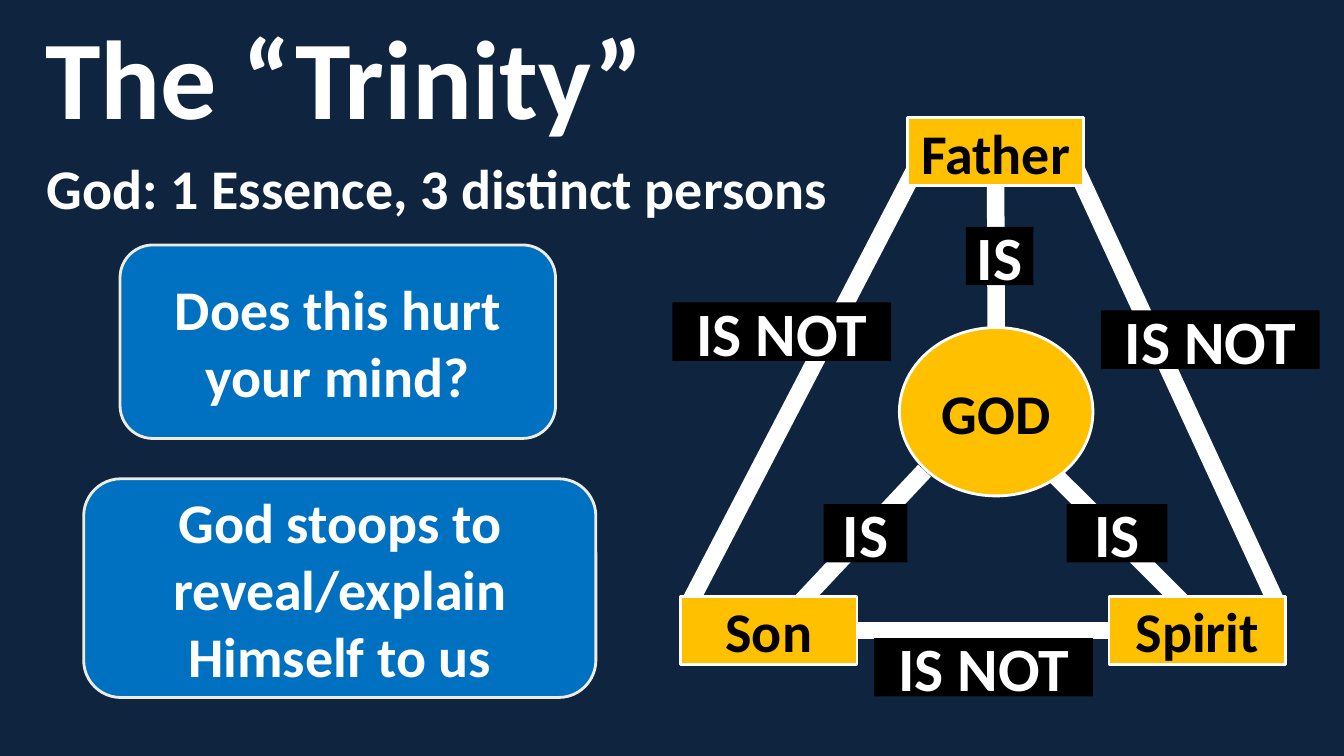
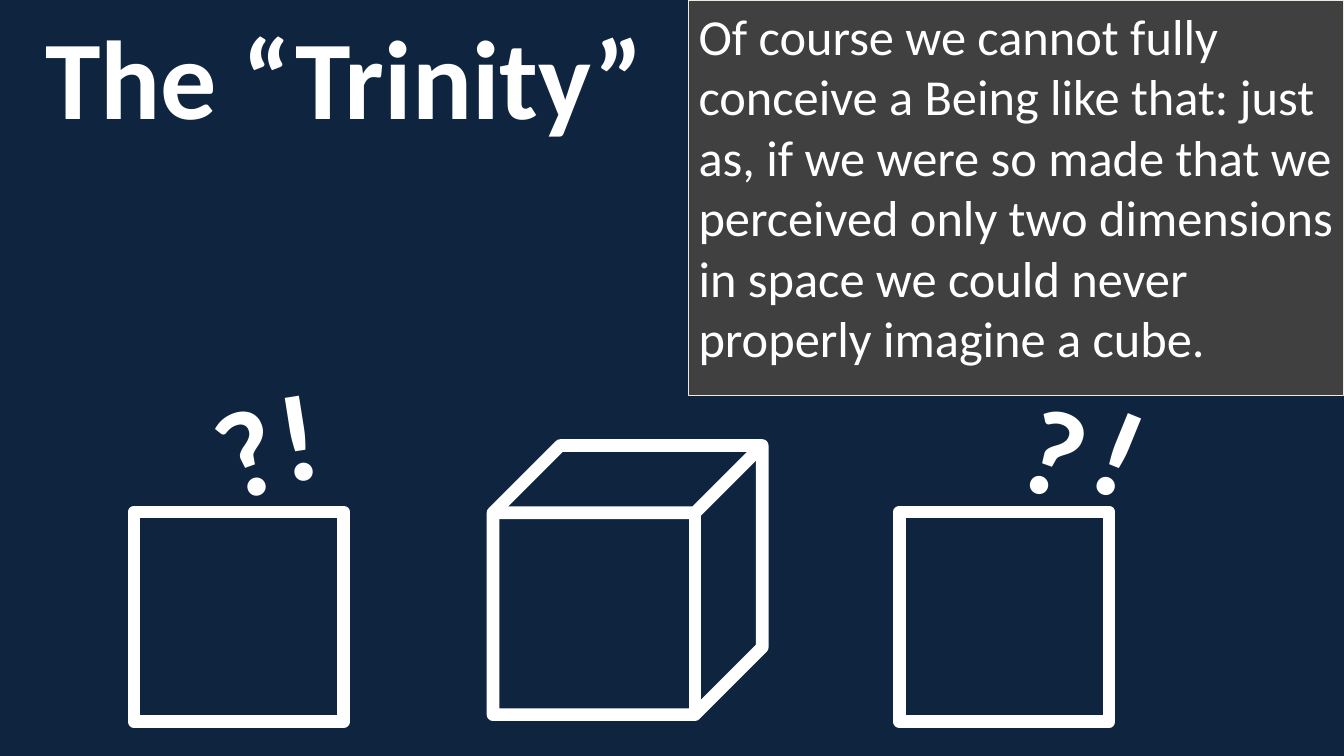
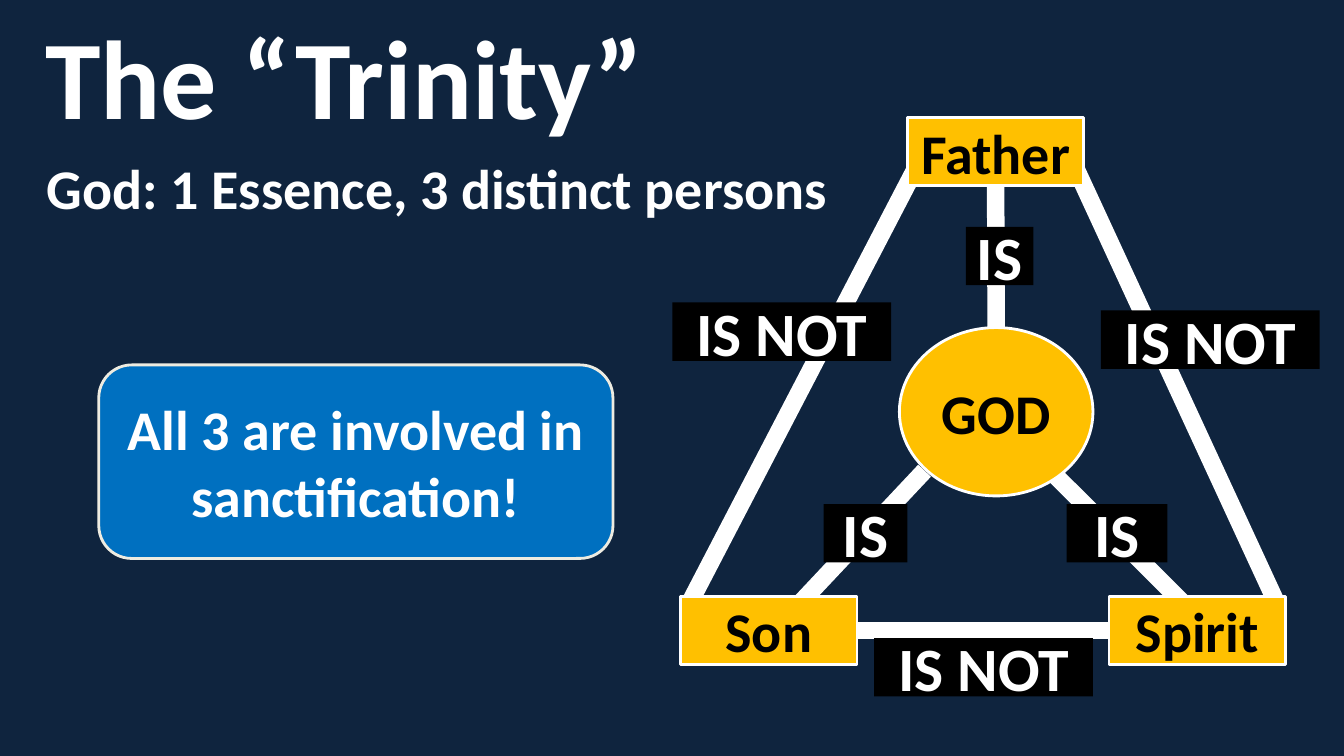
from pptx import Presentation
from pptx.dml.color import RGBColor
from pptx.enum import shapes, text
from pptx.oxml import ns
from pptx import util as u
from lxml import etree

NAVY = RGBColor(0x0F, 0x24, 0x3E)
WHITE = RGBColor(0xFF, 0xFF, 0xFF)
BLACK = RGBColor(0x00, 0x00, 0x00)
GOLD = RGBColor(0xFF, 0xC0, 0x00)
BLUE = RGBColor(0x00, 0x70, 0xC0)
GREY = RGBColor(0x40, 0x40, 0x40)
CREAM = RGBColor(0xEE, 0xEC, 0xE1)

SHAPE = shapes.MSO_SHAPE
CENTER = text.PP_ALIGN.CENTER
MIDDLE = text.MSO_ANCHOR.MIDDLE
TOP, LEFT, BOTTOM, RIGHT = range(4)
TITLE = "The “Trinity”"


class Deck:
    font = "Calibri"
    beam_width = 12.5
    outline_width = 9

    def __init__(self):
        self.presentation = Presentation()
        self.presentation.slide_width = u.Inches(13.33)
        self.presentation.slide_height = u.Inches(7.5)
        background = self.presentation.slide_master.background.fill
        background.solid()
        background.fore_color.rgb = NAVY
        self.slide = None

    def set_text(self, shape, words, size, color=WHITE, bold=True, align=CENTER, anchor=MIDDLE):
        frame = shape.text_frame
        frame.text = words
        frame.word_wrap = True
        frame.auto_size = text.MSO_AUTO_SIZE.NONE
        frame.vertical_anchor = anchor
        paragraph = frame.paragraphs[0]
        paragraph.alignment = align
        font = paragraph.runs[0].font
        font.name = self.font
        font.size = u.Pt(size)
        font.bold = bold
        font.color.rgb = color

    def start_slide(self, title):
        layout = self.presentation.slide_layouts.get_by_name("Title Only")
        self.slide = self.presentation.slides.add_slide(layout)
        shape = self.slide.shapes.title
        shape.left, shape.top = u.Inches(0), u.Inches(0.08)
        shape.width, shape.height = u.Inches(6.84), u.Inches(1.32)
        self.set_text(shape, title, 80)

    def text_box(self, words, left, top, width, height, size, rotation=0):
        box = self.slide.shapes.add_textbox(*map(u.Inches, (left, top, width, height)))
        box.rotation = rotation
        self.set_text(box, words, size)

    def shape(self, kind, left, top, width, height, fill=None, line=None, line_width=2):
        shape = self.slide.shapes.add_shape(kind, *map(u.Inches, (left, top, width, height)))
        shape.shadow.inherit = False
        if fill is None:
            shape.fill.background()
        else:
            shape.fill.solid()
            shape.fill.fore_color.rgb = fill
        if line is None:
            shape.line.fill.background()
        else:
            shape.line.color.rgb = line
            shape.line.width = u.Pt(line_width)
        return shape

    def beam(self, *ends):
        connector = self.slide.shapes.add_connector(
            shapes.MSO_CONNECTOR.STRAIGHT, *map(u.Inches, ends))
        connector.line.color.rgb = WHITE
        connector.line.width = u.Pt(self.beam_width)
        etree.SubElement(connector._element.spPr, ns.qn("a:effectLst"))
        return connector

    def join(self, start, start_side, end, end_side):
        connector = self.beam(0, 0, 1, 1)
        connector.begin_connect(start, start_side)
        connector.end_connect(end, end_side)

    def node(self, kind, words, left, top, width, height):
        shape = self.shape(kind, left, top, width, height, GOLD, WHITE)
        self.set_text(shape, words, 40, BLACK)
        return shape

    def person(self, name, left, top):
        return self.node(SHAPE.RECTANGLE, name, left, top, 1.75, 0.67)

    def label(self, words, left, top, width):
        self.set_text(self.shape(SHAPE.RECTANGLE, left, top, width, 0.58, BLACK), words, 44)

    def callout(self, words, left, top, width, height):
        shape = self.shape(SHAPE.ROUNDED_RECTANGULAR_CALLOUT, left, top, width, height, BLUE, CREAM)
        for index, value in enumerate((-0.22, 0.5, 0.17)):
            shape.adjustments[index] = value
        self.set_text(shape, words, 40)

    def quote(self, words, left, top, width, height):
        shape = self.shape(SHAPE.RECTANGLE, left, top, width, height, GREY, CREAM, 0.75)
        self.set_text(shape, words, 36, bold=False, align=text.PP_ALIGN.LEFT,
                      anchor=text.MSO_ANCHOR.TOP)

    def outline(self, kind, left, top, side):
        self.shape(kind, left, top, side, side, line=WHITE, line_width=self.outline_width)

    def trinity_diagram(self):
        for ends in ((10.42, 4.67, 11.75, 6), (9.17, 4.67, 7.92, 6),
                     (9.17, 1.5, 6.83, 6), (10.67, 1.67, 12.67, 6)):
            self.beam(*ends)
        god = self.node(SHAPE.OVAL, "GOD", 8.92, 3.25, 1.92, 1.67)
        father = self.person("Father", 9, 1.17)
        son = self.person("Son", 6.75, 5.92)
        spirit = self.person("Spirit", 11, 5.92)
        self.join(father, BOTTOM, god, TOP)
        self.join(spirit, LEFT, son, RIGHT)
        for left, top, width in ((8.17, 5, 0.83), (9.58, 2.25, 0.67), (10.58, 5, 1)):
            self.label("IS", left, top, width)
        for left, top in ((6.67, 3), (8.67, 6.33), (10.92, 3.08)):
            self.label("IS NOT", left, top, 2.17)

    def trinity_slide(self, *callouts):
        self.start_slide(TITLE)
        self.text_box("God: 1 Essence, 3 distinct persons", 0.17, 1.32, 8.33, 1.08, 40)
        self.trinity_diagram()
        for callout in callouts:
            self.callout(*callout)

    def cube_slide(self):
        self.start_slide(TITLE)
        self.quote("Of course we cannot fully conceive a Being like that: just as, if we were "
                   "so made that we perceived only two dimensions in space we could never "
                   "properly imagine a cube.", 6.83, 0, 6.5, 3.92)
        self.outline(SHAPE.CUBE, 4.89, 4.42, 2.67)
        for mark, left, top, rotation in (("!", 10.59, 3.91, 22.2), ("!", 2.41, 3.74, 351),
                                          ("?", 9.93, 3.9, 19.8), ("?", 1.9, 3.9, 340.4)):
            self.text_box(mark, left, top, 1.08, 1.08, 88, rotation)
        for left in (1.33, 8.92):
            self.outline(SHAPE.RECTANGLE, left, 5.08, 2.08)


def main():
    deck = Deck()
    deck.trinity_slide(
        ("Does this hurt your mind?", 1.19, 2.43, 4.32, 1.92),
        ("God stoops to reveal/explain Himself to us", 0.83, 4.75, 5.08, 2.17))
    deck.cube_slide()
    deck.trinity_slide(("All 3 are involved in sanctification!", 0.98, 3.62, 5.1, 1.92))
    deck.presentation.save("out.pptx")


if __name__ == "__main__":
    main()
